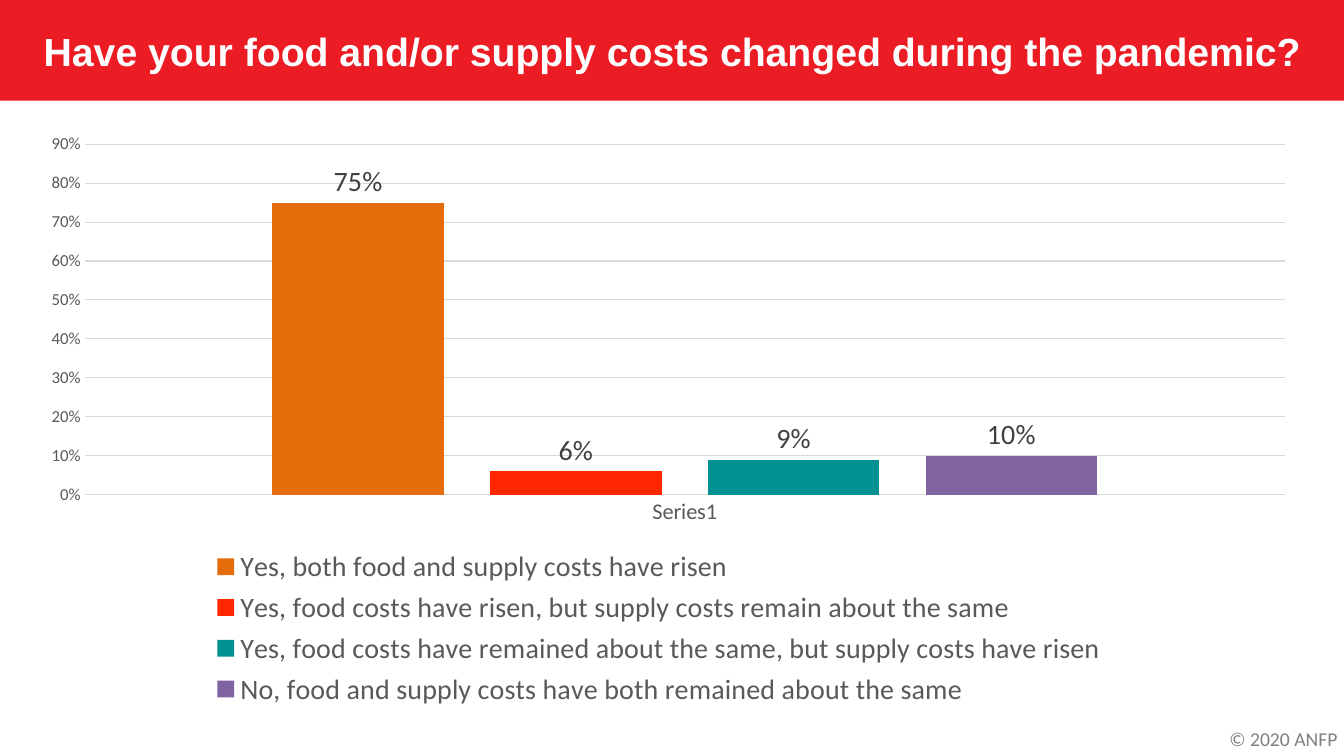
"""Build the survey slide on food and supply costs during the pandemic."""
from lxml.etree import SubElement
from pptx import Presentation
from pptx.chart.data import CategoryChartData
from pptx.dml.color import RGBColor
from pptx.enum.chart import XL_CHART_TYPE, XL_LABEL_POSITION, XL_LEGEND_POSITION, XL_TICK_MARK
from pptx.enum.shapes import MSO_SHAPE
from pptx.enum.text import MSO_ANCHOR, PP_ALIGN
from pptx.oxml.ns import qn
from pptx.util import Pt

BAND_RED = RGBColor(0xEC, 0x1C, 0x24)
WHITE = RGBColor(0xFF, 0xFF, 0xFF)
ORANGE = RGBColor(0xE4, 0x6C, 0x0A)
RED = RGBColor(0xFF, 0x26, 0x00)
TEAL = RGBColor(0x00, 0x91, 0x93)
PURPLE = RGBColor(0x80, 0x64, 0xA2)
AXIS_GREY = RGBColor(0x59, 0x59, 0x59)
LABEL_GREY = RGBColor(0x40, 0x40, 0x40)
FOOTER_GREY = RGBColor(0x80, 0x80, 0x80)
GRID_GREY = RGBColor(0xD9, 0xD9, 0xD9)

ANSWERS = [
    ("Yes, both food and supply costs have risen", 0.75, ORANGE),
    ("Yes, food costs have risen, but supply costs remain about the same", 0.06, RED),
    ("Yes, food costs have remained about the same, but supply costs have risen", 0.09, TEAL),
    ("No, food and supply costs have both remained about the same", 0.1, PURPLE),
]


def assign(target, values):
    for attribute, value in values.items():
        setattr(target, attribute, value)


class SurveySlide:
    def __init__(self, presentation, font_name="Calibri"):
        self.slide = presentation.slides.add_slide(presentation.slide_layouts[5])
        self.font_name = font_name

    def style_font(self, font, size, color, **values):
        assign(font, {"name": self.font_name, "size": Pt(size), "bold": False, **values})
        font.color.rgb = color

    def style_line(self, line):
        line.color.rgb = GRID_GREY
        line.width = Pt(0.75)

    def band(self, width, height):
        band = self.slide.shapes.add_shape(MSO_SHAPE.RECTANGLE, 0, 0, Pt(width), Pt(height))
        band.shadow.inherit = False
        band.fill.solid()
        band.fill.fore_color.rgb = BAND_RED
        band.line.fill.background()
        self.slide.shapes.title._element.addprevious(band._element)

    def title(self, text, left, top, width, height):
        title = self.slide.shapes.title
        assign(title, {"left": Pt(left), "top": Pt(top), "width": Pt(width), "height": Pt(height)})
        self.fill_text(title.text_frame, text, PP_ALIGN.LEFT, 28, WHITE, name="Arial", bold=True)
        title.text_frame.vertical_anchor = MSO_ANCHOR.MIDDLE

    def footer(self, text, left, top, width, height):
        footer = self.slide.shapes.add_textbox(Pt(left), Pt(top), Pt(width), Pt(height))
        self.fill_text(footer.text_frame, text, PP_ALIGN.CENTER, 14, FOOTER_GREY)

    def fill_text(self, frame, text, alignment, size, color, **values):
        frame.word_wrap = True
        paragraph = frame.paragraphs[0]
        paragraph.alignment = alignment
        run = paragraph.add_run()
        run.text = text
        self.style_font(run.font, size, color, **values)

    def chart(self, answers, left, top, width, height):
        survey = CategoryChartData(number_format="0%")
        survey.categories = ["Series1"]
        for answer, share, _ in answers:
            survey.add_series(answer, [share])
        chart = self.slide.shapes.add_chart(
            XL_CHART_TYPE.COLUMN_CLUSTERED, Pt(left), Pt(top), Pt(width), Pt(height), survey
        ).chart
        assign(chart, {"has_title": False, "has_legend": True})
        self.style_font(chart.font, 10, AXIS_GREY)
        columns = chart.plots[0]
        assign(columns, {"gap_width": 219, "overlap": -27, "vary_by_categories": False})
        for series, (_, _, color) in zip(columns.series, answers):
            series.format.fill.solid()
            series.format.fill.fore_color.rgb = color
            assign(series.data_labels, {
                "show_value": True, "position": XL_LABEL_POSITION.OUTSIDE_END,
                "number_format": "0%", "number_format_is_linked": False,
            })
            self.style_font(series.data_labels.font, 20, LABEL_GREY)
        self.axes(chart)
        assign(chart.legend, {"position": XL_LEGEND_POSITION.BOTTOM, "include_in_layout": False})
        self.style_font(chart.legend.font, 20, AXIS_GREY)
        self.place(columns._element.getparent(), 0.04, 0.03, 0.94, 0.58, inner=True)
        self.place(chart.legend._element, 0.13, 0.69, 0.72, 0.28)

    def axes(self, chart):
        for axis, size in ((chart.category_axis, 16), (chart.value_axis, 12)):
            assign(axis, {"major_tick_mark": XL_TICK_MARK.NONE, "minor_tick_mark": XL_TICK_MARK.NONE})
            self.style_font(axis.tick_labels.font, size, AXIS_GREY)
        self.style_line(chart.category_axis.format.line)
        shares = chart.value_axis
        assign(shares, {"minimum_scale": 0, "maximum_scale": 0.9, "major_unit": 0.1,
                        "has_major_gridlines": True})
        assign(shares.tick_labels, {"number_format": "0%", "number_format_is_linked": False})
        shares.format.line.fill.background()
        self.style_line(shares.major_gridlines.format.line)

    def place(self, part, x, y, w, h, inner=False):
        for old_layout in part.findall(qn("c:layout")):
            part.remove(old_layout)
        layout = SubElement(part, qn("c:layout"))
        manual = SubElement(layout, qn("c:manualLayout"))
        settings = {"layoutTarget": "inner"} if inner else {}
        settings |= {"xMode": "edge", "yMode": "edge", "x": x, "y": y, "w": w, "h": h}
        for tag, value in settings.items():
            SubElement(manual, qn(f"c:{tag}")).set("val", str(value))
        part.insert(0 if inner else 1, layout)


def main():
    presentation = Presentation()
    assign(presentation, {"slide_width": Pt(960), "slide_height": Pt(540)})
    survey = SurveySlide(presentation)
    survey.band(960, 72)
    survey.title("Have your food and/or supply costs changed during the pandemic?", 24, 9, 924, 54)
    survey.chart(ANSWERS, 24, 90, 912, 432)
    survey.footer("© 2020 ANFP", 870, 515.5, 93.6, 24.5)
    presentation.save("out.pptx")


if __name__ == "__main__":
    main()
